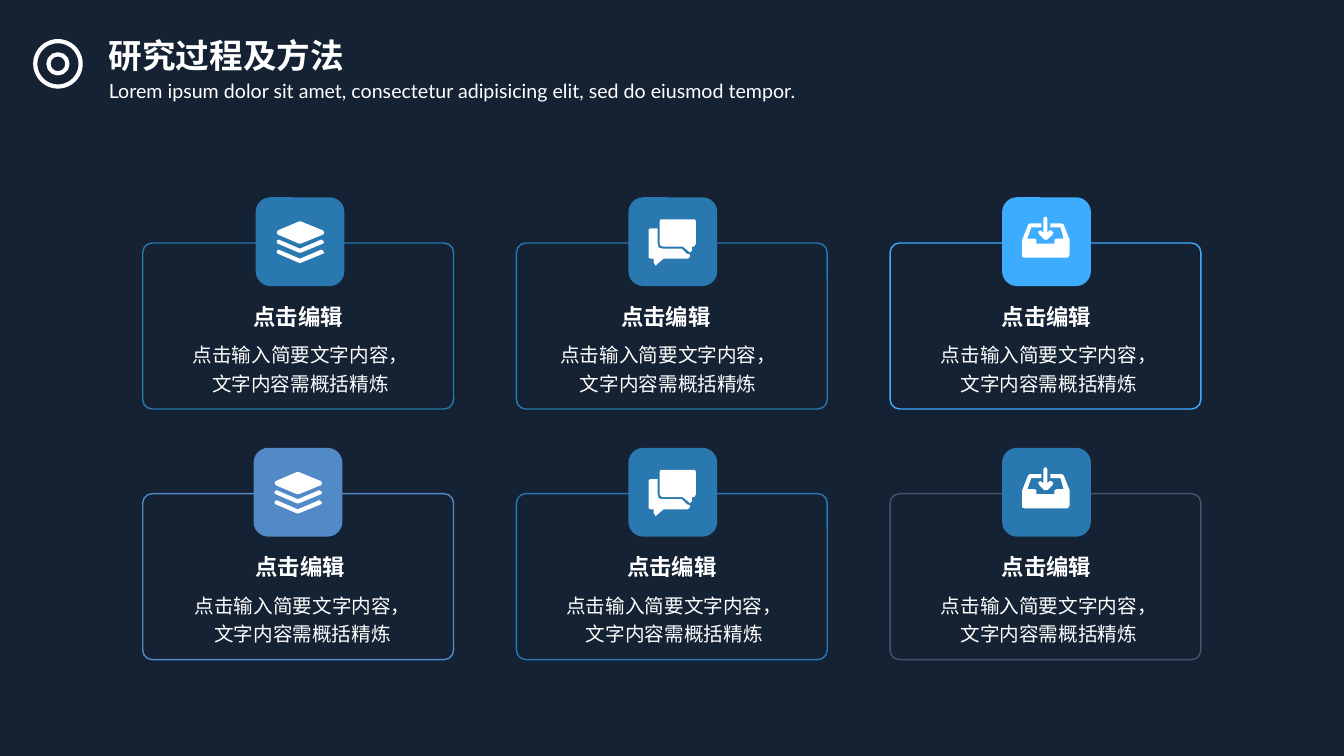
from collections import namedtuple
from dataclasses import dataclass

from pptx import Presentation
from pptx.dml.color import RGBColor
from pptx.enum.shapes import MSO_SHAPE
from pptx.enum.text import PP_ALIGN
from pptx.util import Pt

Box = namedtuple("Box", "left top width height")
Card = namedtuple("Card", "frame_color tile_color icon tile_shift text_shift")


@dataclass(frozen=True)
class Theme:
    font: str = "Lato"
    background: str = "142233"
    white: str = "FFFFFF"
    blue: str = "2A78B0"
    bright: str = "3DACFE"
    soft: str = "518AC6"
    slate: str = "44546A"
    heading_size: float = 24
    card_title_size: float = 16
    body_size: float = 14


THEME = Theme()
ICON_UNIT = Pt(0.72)

# Icon outlines, in hundredths of an inch from the corner of their tile
SHEET = [(67, 46), (45, 55), (43, 55), (22, 46), (21, 45), (21, 43), (23, 42),
         (44, 51), (65, 42), (67, 43), (68, 45)]
LAYERS = [
    [(67, 37), (45, 46), (43, 46), (22, 37), (21, 35), (22, 33), (43, 24),
     (45, 24), (67, 33), (68, 35)],
    SHEET,
    [(x, y + 10) for x, y in SHEET],
]
SPEECH = [
    [(65, 49), (63, 49), (63, 53), (62.5, 54.5), (61, 55), (60, 54), (54, 49),
     (34, 49), (32, 48), (31, 46), (31, 24), (32, 22.5), (34, 22), (65, 22),
     (66.5, 22.5), (67, 24), (67, 46), (66.5, 48)],
    [(53, 51), (58, 56), (61, 57), (61, 59), (59, 61), (35, 61), (29, 66),
     (27, 68), (26, 66), (25, 65), (25, 61), (22, 61), (20.5, 60.5), (20, 59),
     (20, 33), (20.5, 31.5), (22, 31), (29, 31), (29, 46), (30.5, 49.5), (34, 51)],
]
INBOX = [
    [(65, 60), (22, 60), (20.5, 59), (20, 57), (20, 42), (26, 27), (28, 26),
     (39, 26), (39, 30), (29, 30), (25, 41), (32, 41), (33.5, 41.5), (34, 43),
     (34, 46), (52, 46), (52, 43), (52.5, 41.5), (54, 41), (61, 41), (58, 30),
     (48, 30), (48, 26), (59, 26), (61, 27), (67, 42), (67, 57), (66.5, 59)],
    [(51, 35), (50, 37), (45, 42), (43.5, 42.5), (42, 42), (37, 37), (36, 35),
     (36.5, 33.5), (38, 33), (41, 35), (41, 21), (41.5, 19.5), (43, 19),
     (44.5, 19.5), (45, 21), (45, 35), (47, 33), (49, 33), (50.5, 33.5)],
]

CARDS = [
    [Card(THEME.blue, THEME.blue, LAYERS, 80.6, 72),
     Card(THEME.blue, THEME.blue, SPEECH, 80, 67.8),
     Card(THEME.bright, THEME.bright, INBOX, 80, 72.7)],
    [Card(THEME.soft, THEME.soft, LAYERS, 79.1, 73.5),
     Card(THEME.blue, THEME.blue, SPEECH, 80, 72.1),
     Card(THEME.slate, THEME.blue, INBOX, 80, 72.7)],
]


def color(code):
    return RGBColor.from_string(code)


def paint(shape, fill=None, line=None, weight=1):
    shape.shadow.inherit = False
    if fill:
        shape.fill.solid()
        shape.fill.fore_color.rgb = color(fill)
    else:
        shape.fill.background()
    if line:
        shape.line.color.rgb = color(line)
        shape.line.width = Pt(weight)
    else:
        shape.line.fill.background()


def add_preset(page, kind, box, **look):
    shape = page.shapes.add_shape(kind, *map(Pt, box))
    paint(shape, **look)
    return shape


def add_text(page, box, text, size, bold=False, align=PP_ALIGN.LEFT, before=0):
    frame = page.shapes.add_textbox(*map(Pt, box)).text_frame
    frame.word_wrap = True
    para = frame.paragraphs[0]
    para.alignment = align
    para.line_spacing = 1.2
    para.space_before = Pt(before)
    span = para.add_run()
    span.text = text
    span.font.name = THEME.font
    span.font.size = Pt(size)
    span.font.bold = bold
    span.font.color.rgb = color(THEME.white)


def add_icon(page, tile, outlines):
    """Draw all outlines of an icon as one white shape on its tile."""
    first, *others = outlines
    builder = page.shapes.build_freeform(*first[0], scale=ICON_UNIT)
    builder.add_line_segments(first[1:], close=True)
    for outline in others:
        builder.move_to(*outline[0])
        builder.add_line_segments(outline[1:], close=True)
    paint(builder.convert_to_shape(Pt(tile.left), Pt(tile.top)), fill=THEME.white)


def add_card(page, box, card):
    frame = add_preset(page, MSO_SHAPE.ROUNDED_RECTANGLE, box, line=card.frame_color)
    frame.adjustments[0] = 0.057
    tile = Box(box.left + card.tile_shift, box.top - 32.7, 63.4, 63.4)
    add_preset(page, MSO_SHAPE.ROUNDED_RECTANGLE, tile, fill=card.tile_color)
    add_icon(page, tile, card.icon)
    title_left = box.left + card.text_shift
    add_text(page, Box(title_left, box.top + 35.5, 81.4, 30), "点击编辑",
             THEME.card_title_size, bold=True)
    add_text(page, Box(title_left - 50, box.top + 64.7, 181.4, 48.2),
             "点击输入简要文字内容，文字内容需概括精炼",
             THEME.body_size, align=PP_ALIGN.CENTER)


def add_card_grid(page, box):
    for row, cards in enumerate(CARDS):
        for column, card in enumerate(cards):
            add_card(page, Box(box.left + column * 266.9, box.top + row * 179,
                               box.width - 2 * 266.9, box.height - 179), card)


def add_header(page, box):
    for inset, diameter in ((0, 32.4), (9.4, 13.6)):
        add_preset(page, MSO_SHAPE.OVAL,
                   Box(box.left + inset, box.top + 13.5 + inset, diameter, diameter),
                   line=THEME.white, weight=3)
    text_left = box.left + 45.4
    add_text(page, Box(text_left, box.top, 208.8, 39), "研究过程及方法",
             THEME.heading_size, bold=True)
    add_text(page, Box(text_left, box.top + 33.8, box.width - 45.4, 26),
             "Lorem ipsum dolor sit amet, consectetur adipisicing elit, sed do eiusmod tempor.",
             THEME.body_size, before=10)


def main():
    deck = Presentation()
    deck.slide_width, deck.slide_height = Pt(960), Pt(540)
    page = deck.slides.add_slide(deck.slide_layouts[6])
    page.background.fill.solid()
    page.background.fill.fore_color.rgb = color(THEME.background)
    add_card_grid(page, Box(102, 173.6, 755.8, 297.6))
    add_header(page, Box(25.2, 15.9, 610.6, 59.8))
    deck.save("out.pptx")


if __name__ == "__main__":
    main()
